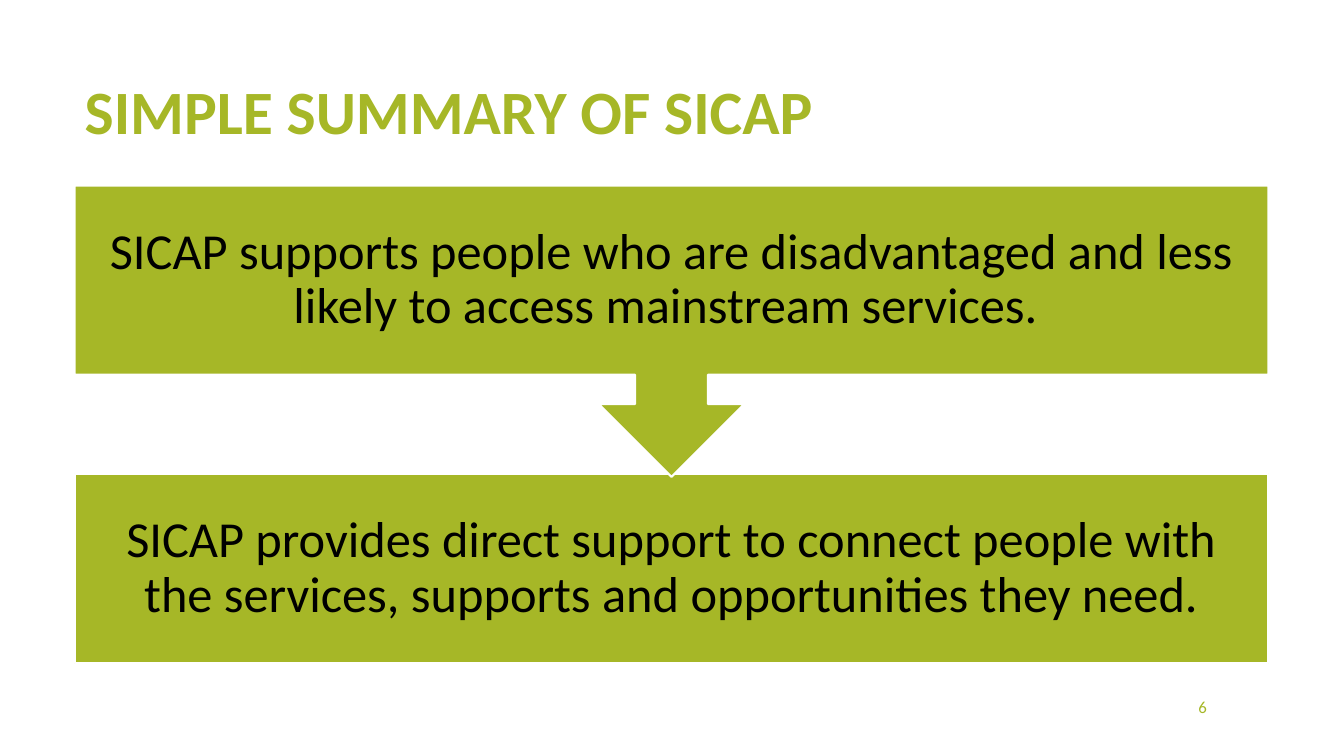
from pptx import Presentation
from pptx import util as u
from pptx.dml.color import RGBColor
from pptx.enum import shapes, text

HUES = {"lime": "A6B727", "black": "000000", "white": "FFFFFF"}
LEFT, WIDE, TALL = 0.74, 11.84, 1.88


class Deck:
    """Holds the style and current slide, and adds each kind of element."""

    def __init__(self):
        self.prs = Presentation()
        self.prs.slide_width = u.Inches(13.33)
        self.prs.slide_height = u.Inches(7.5)
        self.slide = self.prs.slides.add_slide(self.prs.slide_layouts[5])
        self.face = "Calibri"

    def hue(self, name):
        return RGBColor.from_string(HUES[name])

    def letter(self, shape, words, size, hue, align, anchor, gap=1, pad=None, bold=False):
        frame = shape.text_frame
        frame.text = words
        look = {"word_wrap": True, "vertical_anchor": anchor,
                "auto_size": text.MSO_AUTO_SIZE.NONE}
        if pad is not None:
            sides = ("left", "top", "right", "bottom")
            look.update({f"margin_{side}": u.Inches(pad) for side in sides})
        para = frame.paragraphs[0]
        font = {"name": self.face, "size": u.Pt(size), "bold": bold}
        lines = {"alignment": align, "line_spacing": gap}
        for item, style in ((frame, look), (para, lines), (para.runs[0].font, font)):
            for key, value in style.items():
                setattr(item, key, value)
        para.runs[0].font.color.rgb = self.hue(hue)

    def title(self, words, *box):
        shape = self.slide.shapes.title
        for key, value in zip(("left", "top", "width", "height"), box):
            setattr(shape, key, u.Inches(value))
        self.letter(shape, words, 44, "lime", text.PP_ALIGN.LEFT,
                    text.MSO_ANCHOR.TOP, gap=0.9, bold=True)

    def block(self, kind, words, *box):
        shape = self.slide.shapes.add_shape(kind, *map(u.Inches, box))
        shape.shadow.inherit = False
        shape.fill.solid()
        shape.fill.fore_color.rgb = self.hue("lime")
        shape.line.color.rgb = self.hue("white")
        shape.line.width = u.Pt(1.5)
        self.letter(shape, words, 36, "black", text.PP_ALIGN.CENTER,
                    text.MSO_ANCHOR.MIDDLE, gap=0.9, pad=0.28)

    def label(self, words, *box):
        shape = self.slide.shapes.add_textbox(*map(u.Inches, box))
        self.letter(shape, words, 12, "lime", text.PP_ALIGN.RIGHT, text.MSO_ANCHOR.MIDDLE)


def main():
    deck = Deck()
    kinds = shapes.MSO_SHAPE
    deck.title("SIMPLE SUMMARY OF SICAP", LEFT, 0.76, WIDE, 1.08)
    deck.block(kinds.RECTANGLE,
               "SICAP provides direct support to connect people with "
               "the services, supports and opportunities they need.",
               LEFT, 4.7, WIDE, TALL)
    deck.block(kinds.DOWN_ARROW_CALLOUT,
               "SICAP supports people who are disadvantaged and less "
               "likely to access mainstream services. ",
               LEFT, 1.84, WIDE, 2.89)
    deck.label("6", 10.2, 6.81, 1.87, 0.4)
    deck.prs.save("out.pptx")


if __name__ == "__main__":
    main()
